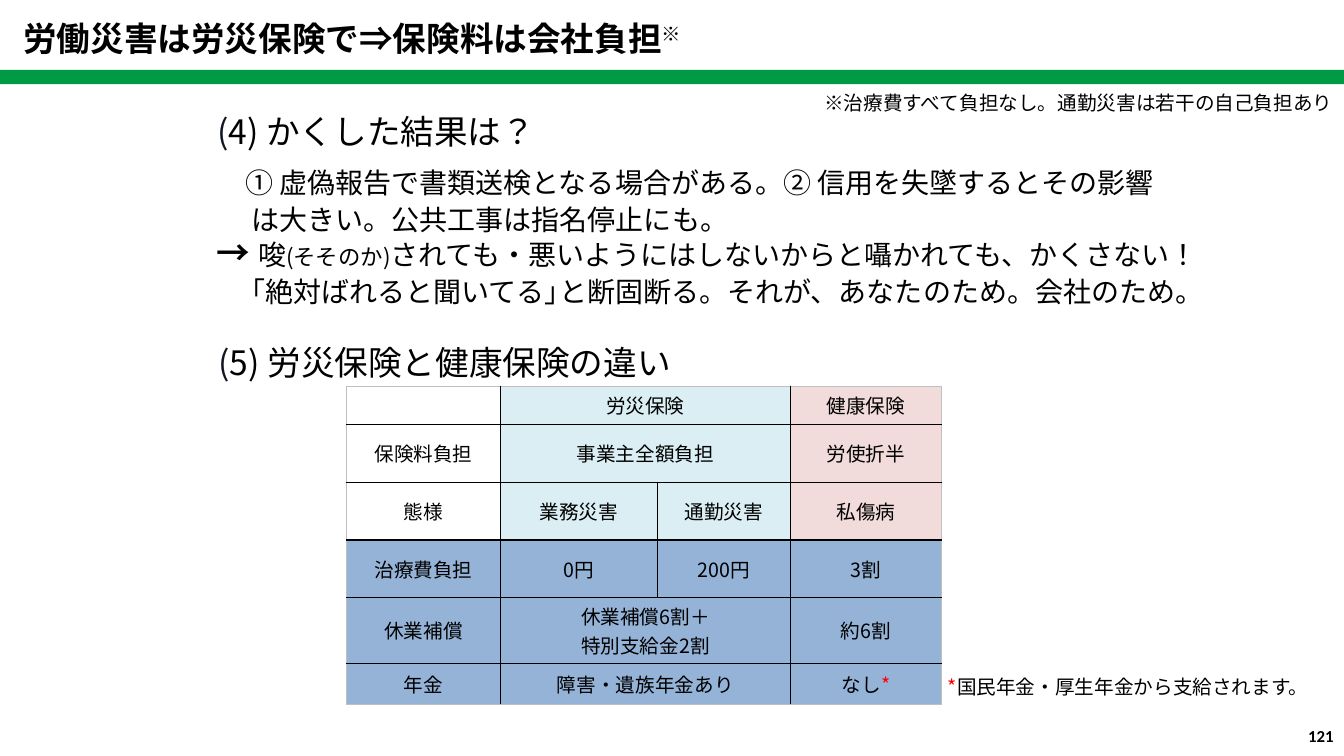
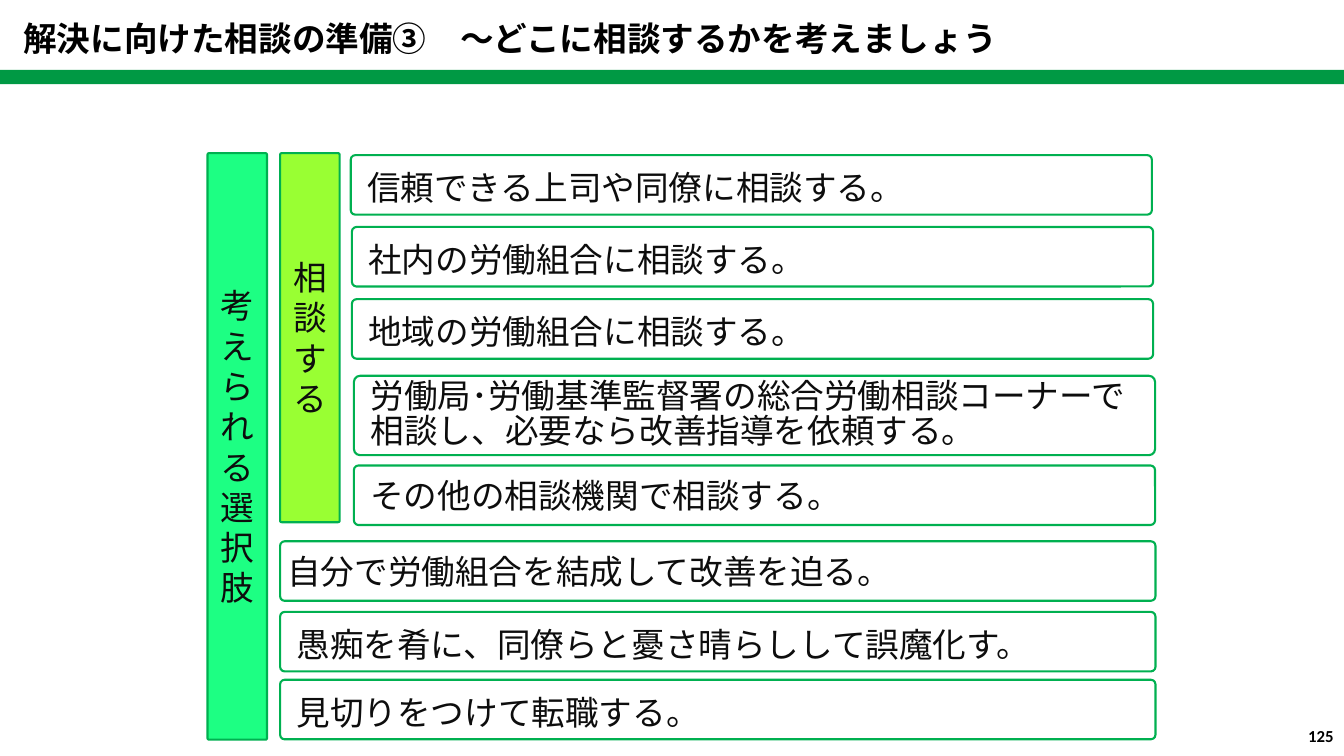
from lxml import etree
from pptx import Presentation
from pptx import util as u
from pptx.dml.color import RGBColor
from pptx.enum import lang, shapes, text
from pptx.oxml.ns import qn

FONT, NUMBER_FONT = "Noto Sans CJK JP", "Calibri"
BLACK, INK, NAVY, WHITE, RED = "000000", "0D0D0D", "111422", "FFFFFF", "FF0000"
BAND, OUTLINE, GRAY = "009944", "00B050", "BFBFBF"
MINT, LIME = "1DFF83", "99FF33"
AQUA, PINK, BLUE = "DBEEF4", "F2DCDB", "95B3D7"
LEFT, CENTER, RIGHT = text.PP_ALIGN.LEFT, text.PP_ALIGN.CENTER, text.PP_ALIGN.RIGHT
TOP, MIDDLE = text.MSO_ANCHOR.TOP, text.MSO_ANCHOR.MIDDLE
WIDTH, HEIGHT = 33.87, 19.05

# A paragraph is a list of spans: (text, settings that differ from the default)
INSURANCE_TITLE = [("労働災害は労災保険で⇒保険料は会社負担", {}), ("※", {"baseline": 30000})]
OPTIONS_TITLE = [("解決に向けた相談の準備③　～どこに相談するかを考えましょう", {})]
COST_NOTE = "※治療費すべて負担なし。通勤災害は若干の自己負担あり"
PENSION_NOTE = [("*", {"color": RED}), ("国民年金・厚生年金から支給されます。", {})]
# (heading after its bracket, top, height, top inset, line spacing)
HEADINGS = [
    ("4) かくした結果は？", 2.29, 6.83, 0.13, 38),
    ("5) 労災保険と健康保険の違い", 8.13, 10.39, 0.5, 26),
]
# (indent, spans)
ADVICE = [
    (0.71, [("① 虚偽報告で書類送検となる場合がある。② 信用を失墜するとその影響", {})]),
    (0.87, [("は大きい。公共工事は指名停止にも。", {})]),
    (0, [("→ ", {"size": 24, "bold": True}), ("唆", {}), ("(そそのか)", {"size": 16}),
         ("されても・悪いようにはしないからと囁かれても、かくさない！", {})]),
    (0.87, [("｢絶対ばれると聞いてる｣と断固断る。それが、あなたのため。会社のため。", {})]),
]

COLUMNS = [3.87, 3.96, 3.35, 3.81]
# (height, cell fills, cells); None continues the cell to its left
ROWS = [
    (0.97, (WHITE, AQUA, AQUA, PINK), ("", "労災保険", None, "健康保険")),
    (1.45, (WHITE, AQUA, AQUA, PINK), ("保険料負担", "事業主全額負担", None, "労使折半")),
    (1.45, (WHITE, AQUA, AQUA, PINK), ("態様", "業務災害", "通勤災害", "私傷病")),
    (1.45, (BLUE,) * 4, ("治療費負担", "0円", "200円", "3割")),
    (1.67, (BLUE,) * 4, ("休業補償", "休業補償6割＋\n特別支給金2割", None, "約6割")),
    (1.04, (BLUE,) * 4, ("年金", "障害・遺族年金あり", None, "なし*")),
]
BENEFITS_START = 3

# (text, left, height, fill)
SIDE_BARS = [("考えられる選択肢", 5.23, 14.78, MINT), ("相談する", 7.06, 9.3, LIME)]
# (text, left, top, height, left inset, line spacing)
CONSULT = [
    ("信頼できる上司や同僚に相談する。", 8.84, 3.91, 1.5, 0.38, 32),
    ("社内の労働組合に相談する。", 8.87, 5.72, 1.5, 0.38, 32),
    ("地域の労働組合に相談する。", 8.87, 7.54, 1.5, 0.38, 32),
    ("労働局･労働基準監督署の総合労働相談コーナーで相談し、必要なら改善指導を依頼する。",
     8.92, 9.47, 2, 0.38, 25),
    ("その他の相談機関で相談する。", 8.92, 11.73, 1.5, 0.38, None),
]
ALONE = [
    ("自分で労働組合を結成して改善を迫る。", 7.06, 13.64, 1.5, 0.15, None),
    ("愚痴を肴に、同僚らと憂さ晴らしして誤魔化す。", 7.06, 15.42, 1.5, 0.38, 32),
    ("見切りをつけて転職する。", 7.06, 17.13, 1.5, 0.38, 32),
]
# (options, width)
OPTION_GROUPS = [(CONSULT, 20.19), (ALONE, 22.06)]


def rgb(color):
    return RGBColor.from_string(color)


def add_spans(para, spans, size, color=BLACK, bold=False, font=FONT):
    for words, changes in spans:
        span = para.add_run()
        span.text = words
        span.font.name = font
        span.font.language_id = lang.MSO_LANGUAGE_ID.JAPANESE
        span.font.size = u.Pt(changes.get("size", size))
        span.font.bold = changes.get("bold", bold)
        span.font.color.rgb = rgb(changes.get("color", color))
        properties = span.font._element
        etree.SubElement(properties, qn("a:ea"), typeface=font)
        if "baseline" in changes:
            properties.set("baseline", str(changes["baseline"]))


def fill_frame(box, paragraphs, size, insets=(0.1, 0.13, 0.1, 0.13), anchor=TOP,
               align=LEFT, spacing=None, wrap=True, **style):
    """Write (indent, spans) paragraphs; insets run left, top, right, bottom."""
    frame = box.text_frame
    frame.word_wrap = wrap
    frame.vertical_anchor = anchor
    frame.margin_left, frame.margin_top, frame.margin_right, frame.margin_bottom = map(u.Cm, insets)
    for index, (indent, spans) in enumerate(paragraphs):
        para = frame.add_paragraph() if index else frame.paragraphs[0]
        para.alignment = align
        if spacing:
            para.line_spacing = u.Pt(spacing)
        if indent:
            para._p.get_or_add_pPr().set("marL", str(u.Cm(indent)))
        add_spans(para, spans, size, **style)


def add_text(page, area, paragraphs, size, **options):
    box = page.shapes.add_textbox(*map(u.Cm, area))
    fill_frame(box, paragraphs, size, insets=(0.25, 0.13, 0.25, 0.13), **options)


def add_panel(page, area, fill=None, line=None, corner=None):
    """Draw a rectangle, rounded when a corner ratio is given."""
    kind = shapes.MSO_SHAPE.ROUNDED_RECTANGLE if corner else shapes.MSO_SHAPE.RECTANGLE
    panel = page.shapes.add_shape(kind, *map(u.Cm, area))
    panel.shadow.inherit = False
    if corner:
        panel.adjustments[0] = corner
    if fill:
        panel.fill.solid()
        panel.fill.fore_color.rgb = rgb(fill)
    else:
        panel.fill.background()
    if line:
        panel.line.color.rgb = rgb(line)
        panel.line.width = u.Pt(1.5)
    else:
        panel.line.fill.background()
    return panel


def add_option(page, area, words, fill, corner, **options):
    panel = add_panel(page, area, fill, OUTLINE, corner)
    fill_frame(panel, [(0, [(words, {})])], 24, anchor=MIDDLE, color=INK, **options)


def add_page(deck, title, number):
    page = deck.slides.add_slide(deck.slide_layouts[6])
    add_panel(page, (0, 1.76, WIDTH, 0.36), BAND)
    add_text(page, (0.34, 0.33, 32.6, 1.27), [(0, title)], 24, bold=True)
    add_text(page, (25.96, 18.03, 7.9, 1.02), [(0, [(number, {})])], 12,
             anchor=MIDDLE, align=RIGHT, bold=True, font=NUMBER_FONT)
    return page


def set_border(cell, side, color, width):
    line = etree.SubElement(cell._tc.get_or_add_tcPr(), qn("a:ln" + side), w=str(u.Pt(width)))
    fill = etree.SubElement(line, qn("a:solidFill"))
    etree.SubElement(fill, qn("a:srgbClr"), val=color)


def write_cell(cell, words):
    cell.vertical_anchor = MIDDLE
    cell.margin_top = cell.margin_bottom = u.Cm(0.1)
    for index, line in enumerate(words.split("\n")):
        para = cell.text_frame.add_paragraph() if index else cell.text_frame.paragraphs[0]
        para.alignment = CENTER
        para.font.size = u.Pt(14)
        spans = [(line.rstrip("*"), {})]
        if line.endswith("*"):
            spans.append(("*", {"color": RED}))
        if line:
            add_spans(para, spans, 14)


def add_insurance_table(page):
    last_row, last_column = len(ROWS) - 1, len(COLUMNS) - 1
    frame = page.shapes.add_table(len(ROWS), len(COLUMNS), u.Cm(8.74), u.Cm(9.73),
                                  u.Cm(sum(COLUMNS)), u.Cm(sum(row[0] for row in ROWS)))
    table = frame.table
    table.first_row = table.horz_banding = False
    for column, width in zip(table.columns, COLUMNS):
        column.width = u.Cm(width)
    for r, (height, fills, cells) in enumerate(ROWS):
        table.rows[r].height = u.Cm(height)
        for c, (fill, words) in enumerate(zip(fills, cells)):
            cell = table.cell(r, c)
            edges = {"L": c == 0, "R": c == last_column, "T": r == 0, "B": r == last_row}
            for side, outer in edges.items():
                heavy = (side, r) in (("B", BENEFITS_START - 1), ("T", BENEFITS_START))
                set_border(cell, side, GRAY if outer else BLACK, 1.5 if heavy else 1)
            cell.fill.solid()
            cell.fill.fore_color.rgb = rgb(fill)
            if words is None:
                table.cell(r, c - 1).merge(cell)
            else:
                write_cell(cell, words)


def build_insurance(deck):
    page = add_page(deck, INSURANCE_TITLE, "121")
    for heading, top, height, inset, spacing in HEADINGS:
        panel = add_panel(page, (5.33, top, 23.8, height), WHITE, corner=0.026)
        fill_frame(panel, [(0, [("(", {"color": NAVY}), (heading, {})])], 24,
                   insets=(0.1, inset, 0.1, 0.13), spacing=spacing)
    advice = add_panel(page, (5.33, 3.94, 25.8, 4.85), corner=0.026)
    fill_frame(advice, ADVICE, 20, spacing=26)
    add_insurance_table(page)
    pension = add_panel(page, (23.77, 16.26, 9.8, 1.88), corner=0.037)
    fill_frame(pension, [(0, PENSION_NOTE)], 14,
               insets=(0.1, 0.1, 0, 0.1), anchor=MIDDLE, spacing=22)
    add_text(page, (20.52, 2.16, 13.49, 0.86), [(0, [(COST_NOTE, {})])], 14, wrap=False)


def build_options(deck):
    page = add_page(deck, OPTIONS_TITLE, "125")
    for words, left, height, fill in SIDE_BARS:
        add_option(page, (left, 3.86, 1.5, height), words, fill, 0.026,
                   insets=(0.15, 0.08, 0.15, 0.08), align=CENTER)
    for options, width in OPTION_GROUPS:
        for words, left, top, height, inset, spacing in options:
            add_option(page, (left, top, width, height), words, WHITE, 0.077,
                       insets=(inset, 0.08, 0.15, 0.08), spacing=spacing)


def main():
    deck = Presentation()
    deck.slide_width, deck.slide_height = u.Cm(WIDTH), u.Cm(HEIGHT)
    build_insurance(deck)
    build_options(deck)
    deck.save("out.pptx")


if __name__ == "__main__":
    main()
